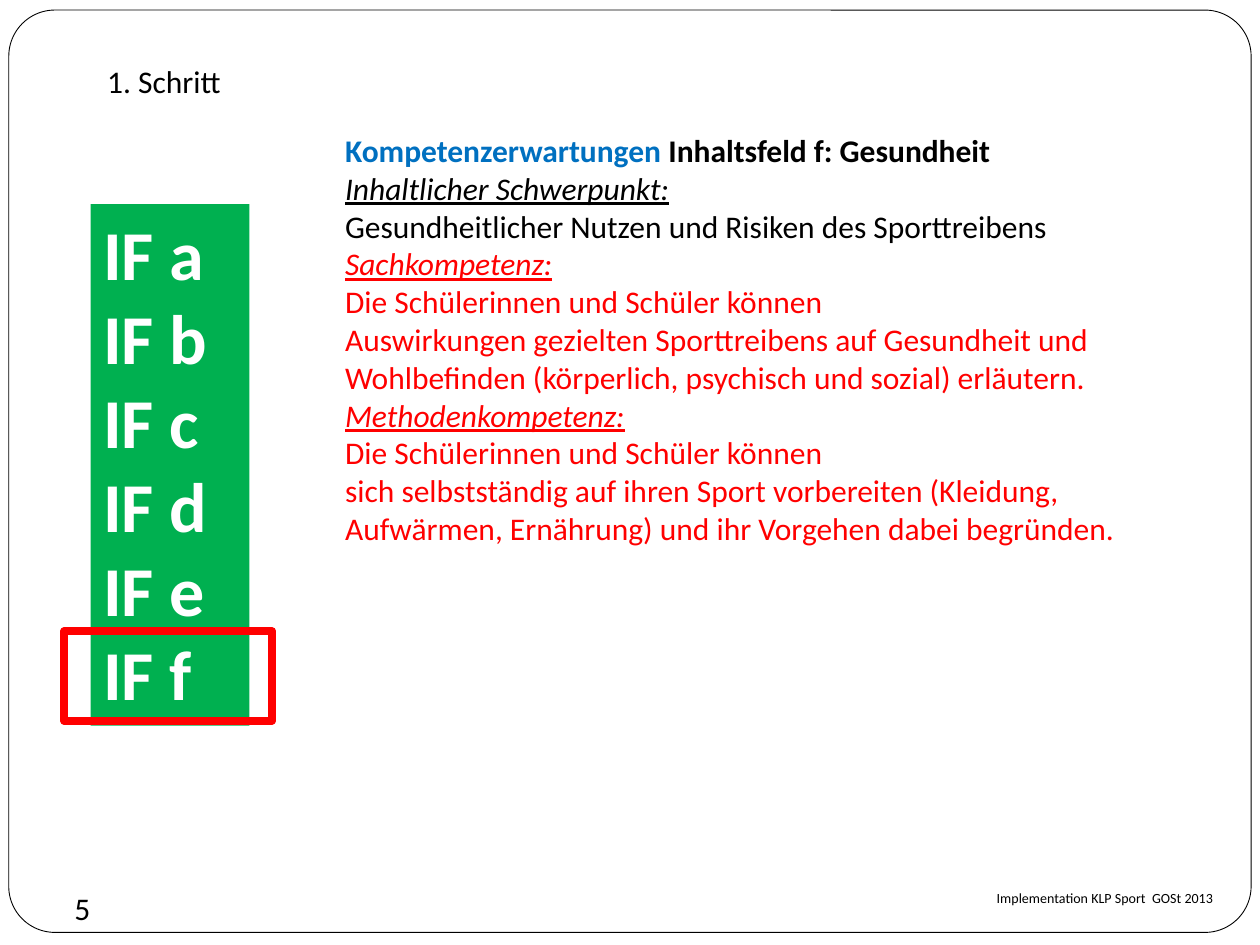
import pptx
import pptx.util
import pptx.dml.color
import pptx.enum.shapes
import pptx.enum.text

Inches, Pt = pptx.util.Inches, pptx.util.Pt
RGB = pptx.dml.color.RGBColor
KIND = pptx.enum.shapes.MSO_SHAPE
TEXT = pptx.enum.text

BLACK = RGB(0, 0, 0)
WHITE = RGB(255, 255, 255)
GREEN = RGB(0x00, 0xB0, 0x50)
BLUE = RGB(0x00, 0x70, 0xC0)
RED = RGB(255, 0, 0)
FONT = "Calibri"

FIELDS = "abcdef"
PUPILS = "Die Schülerinnen und Schüler können"
# Text, colour, heading or not
GOALS = [
    ("Inhaltlicher Schwerpunkt:", BLACK, True),
    ("Gesundheitlicher Nutzen und Risiken des Sporttreibens", BLACK, False),
    ("Sachkompetenz:", RED, True),
    (PUPILS, RED, False),
    ("Auswirkungen gezielten Sporttreibens auf Gesundheit und Wohlbefinden "
     "(körperlich, psychisch und sozial) erläutern.", RED, False),
    ("Methodenkompetenz:", RED, True),
    (PUPILS, RED, False),
    ("sich selbstständig auf ihren Sport vorbereiten (Kleidung, Aufwärmen, "
     "Ernährung) und ihr Vorgehen dabei begründen.", RED, False),
]


def place(shape, box):
    shape.left, shape.top, shape.width, shape.height = map(Inches, box)


def style(font, size, color=BLACK, bold=False):
    font.name, font.size, font.bold = FONT, Pt(size), bold
    font.color.rgb = color


def add_box(slide, kind, box, fill=None, line=None, width=1):
    shape = slide.shapes.add_shape(kind, *map(Inches, box))
    shape.shadow.inherit = False
    if fill is None:
        shape.fill.background()
    else:
        shape.fill.solid()
        shape.fill.fore_color.rgb = fill
    if line is None:
        shape.line.fill.background()
    else:
        shape.line.color.rgb = line
        shape.line.width = Pt(width)
    return shape


def add_frame(slide, box):
    frame = add_box(slide, KIND.ROUNDED_RECTANGLE, box, WHITE, BLACK, 0.5)
    frame.adjustments[0] = 0.05


def add_title(slide, box):
    title = slide.shapes.title
    place(title, box)
    text = title.text_frame
    text.text = "1. Schritt"
    text.vertical_anchor = TEXT.MSO_ANCHOR.TOP
    text.auto_size = TEXT.MSO_AUTO_SIZE.NONE
    text.word_wrap = False
    text.paragraphs[0].alignment = TEXT.PP_ALIGN.LEFT
    style(text.paragraphs[0].font, 18)


def add_fields(slide, box):
    text = add_box(slide, KIND.RECTANGLE, box, GREEN).text_frame
    text.vertical_anchor = TEXT.MSO_ANCHOR.TOP
    text.word_wrap = False
    text.text = "\n".join(f"IF {name}" for name in FIELDS)
    for para in text.paragraphs:
        para.alignment = TEXT.PP_ALIGN.LEFT
        style(para.font, 40, WHITE, True)


def add_mark(slide, box):
    mark = add_box(slide, KIND.ROUNDED_RECTANGLE, box, line=RED, width=4.5)
    mark.adjustments[0] = 0


def add_goals(slide, box):
    text = slide.shapes.add_textbox(*map(Inches, box)).text_frame
    text.word_wrap = True
    # Heading in two colours
    head = text.paragraphs[0]
    for words, color in (("Kompetenzerwartungen ", BLUE),
                         ("Inhaltsfeld f: Gesundheit", BLACK)):
        run = head.add_run()
        run.text = words
        style(run.font, 18, color, True)
    for words, color, topic in GOALS:
        para = text.add_paragraph()
        para.text = words
        style(para.font, 18, color)
        para.font.italic = para.font.underline = topic


def add_note(slide, box, words, size):
    text = slide.shapes.add_textbox(*map(Inches, box)).text_frame
    text.margin_left = text.margin_right = 0
    text.margin_top = text.margin_bottom = 0
    text.word_wrap = True
    text.text = words
    style(text.paragraphs[0].font, size)


def main():
    deck = pptx.Presentation()
    deck.slide_width, deck.slide_height = Inches(10), Inches(7.5)
    slide = deck.slides.add_slide(deck.slide_layouts[5])
    # Frame goes behind the title
    add_frame(slide, (0.07, 0.08, 9.86, 7.32))
    tree = slide.shapes.title.element.getparent()
    tree.append(slide.shapes.title.element)
    add_title(slide, (0.75, 0.44, 1.26, 0.4))
    # Content fields with the current one marked
    add_fields(slide, (0.72, 1.62, 1.26, 4.14))
    add_mark(slide, (0.51, 5.01, 1.65, 0.71))
    add_goals(slide, (2.64, 0.99, 6.99, 4.04))
    # Page number and footer
    add_note(slide, (0.59, 7.06, 0.32, 0.37), "5", 18)
    add_note(slide, (7.91, 7.06, 2.28, 0.37),
             "Implementation KLP Sport  GOSt 2013", 8)
    deck.save("out.pptx")


if __name__ == "__main__":
    main()
